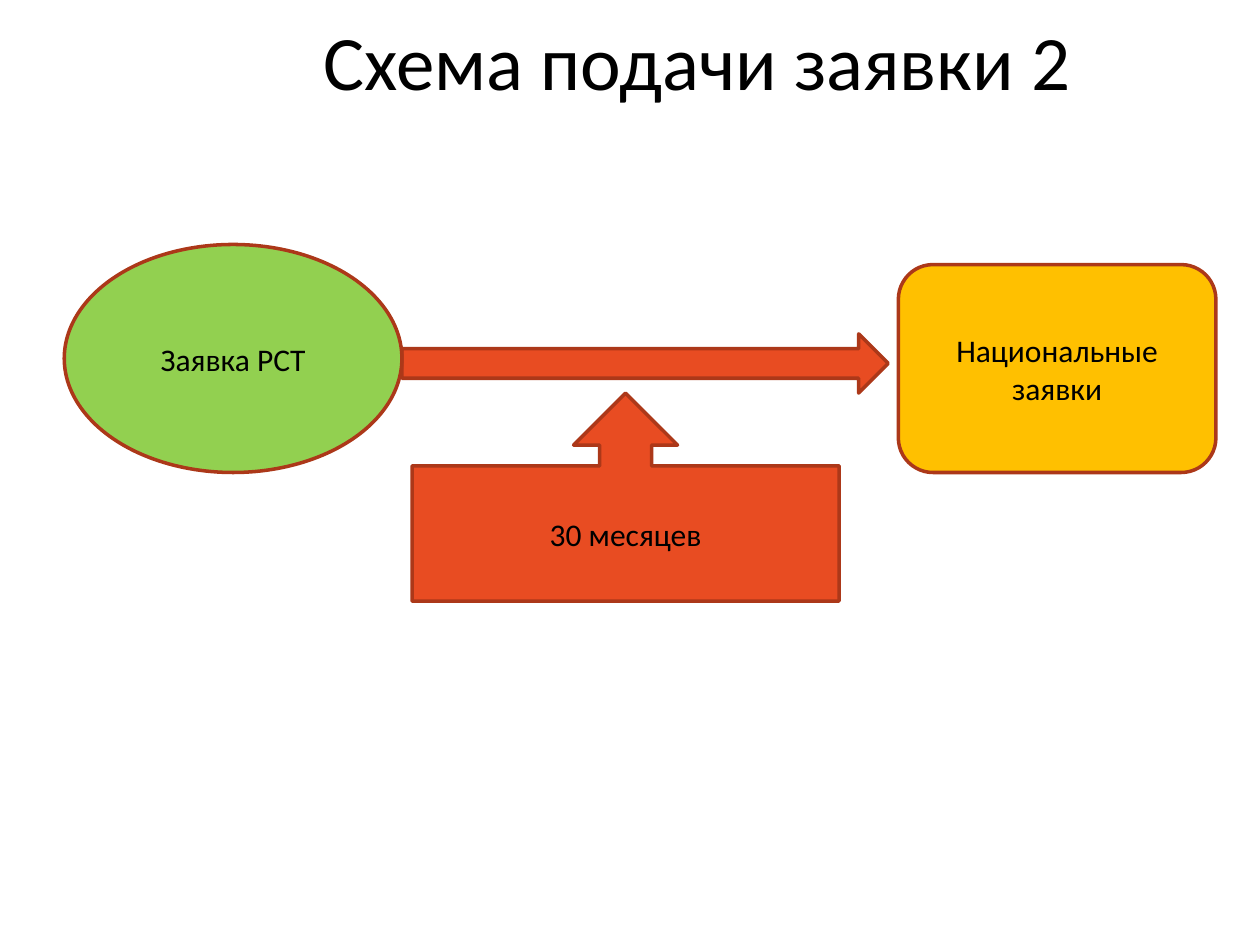
"""Builds the application filing scheme slide."""
import pptx
import pptx.dml.color
import pptx.enum.shapes
import pptx.enum.text
import pptx.util

SHAPE = pptx.enum.shapes.MSO_SHAPE
WIDTH, HEIGHT = 10, 7.5
FONT, BLACK, RED, OUTLINE = "Calibri", "000000", "E84C22", "AC3819"

TITLE = ("Схема подачи заявки 2", (1.43, 0.28, 8.21, 0.39))
STEPS = [
    (SHAPE.RIGHT_ARROW, "", RED, (3.19, 2.65, 3.86, 0.47)),
    (SHAPE.OVAL, "Заявка РСТ", "92D050", (0.51, 1.94, 2.68, 1.81)),
    (SHAPE.ROUNDED_RECTANGLE, "Национальные заявки", "FFC000", (7.13, 2.1, 2.52, 1.65)),
    (SHAPE.UP_ARROW_CALLOUT, "30 месяцев", RED, (3.27, 3.12, 3.39, 1.65)),
]


def rgb(color):
    return pptx.dml.color.RGBColor.from_string(color)


def inches(box):
    return [pptx.util.Inches(v) for v in box]


def write(sp, text, size):
    tf = sp.text_frame
    tf.word_wrap = True
    tf.auto_size = pptx.enum.text.MSO_AUTO_SIZE.NONE
    tf.vertical_anchor = pptx.enum.text.MSO_ANCHOR.MIDDLE
    tf.text = text
    p = tf.paragraphs[0]
    p.alignment = pptx.enum.text.PP_ALIGN.CENTER
    for r in p.runs:
        r.font.name = FONT
        r.font.size = pptx.util.Pt(size)
        r.font.color.rgb = rgb(BLACK)


def add_step(s, kind, text, fill, box):
    sp = s.shapes.add_shape(kind, *inches(box))
    sp.shadow.inherit = False
    sp.fill.solid()
    sp.fill.fore_color.rgb = rgb(fill)
    sp.line.color.rgb = rgb(OUTLINE)
    sp.line.width = pptx.util.Pt(2)
    if text:
        write(sp, text, 18)


def main():
    prs = pptx.Presentation()
    prs.slide_width, prs.slide_height = inches((WIDTH, HEIGHT))
    s = prs.slides.add_slide(prs.slide_layouts[6])
    text, box = TITLE
    write(s.shapes.add_textbox(*inches(box)), text, 44)
    for step in STEPS:
        add_step(s, *step)
    prs.save("out.pptx")


if __name__ == "__main__":
    main()
